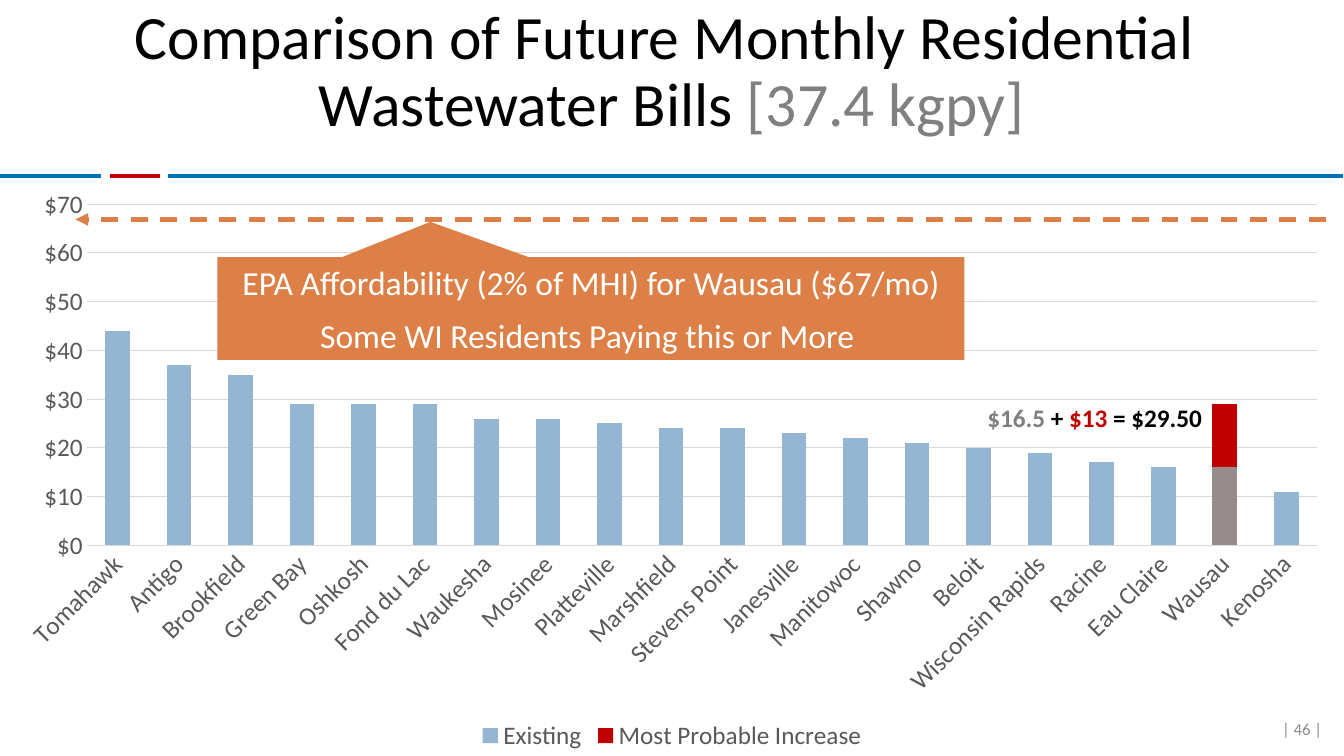
"""Build a slide comparing future monthly residential wastewater bills."""
from lxml import etree
from pptx import Presentation
from pptx.chart.data import CategoryChartData
from pptx.dml.color import RGBColor
from pptx.enum.chart import XL_CHART_TYPE, XL_LEGEND_POSITION, XL_TICK_MARK
from pptx.enum.dml import MSO_LINE
from pptx.enum.shapes import MSO_CONNECTOR, MSO_SHAPE
from pptx.enum.text import MSO_ANCHOR, PP_ALIGN
from pptx.oxml.ns import qn
from pptx.util import Cm, Pt

STACK = XL_CHART_TYPE.COLUMN_STACKED
BOTTOM = XL_LEGEND_POSITION.BOTTOM
NO_TICK = XL_TICK_MARK.NONE
DASH = MSO_LINE.DASH
LINE = MSO_CONNECTOR.STRAIGHT
CALLOUT = MSO_SHAPE.RECTANGULAR_CALLOUT
TOP, MIDDLE = MSO_ANCHOR.TOP, MSO_ANCHOR.MIDDLE
CENTER, RIGHT = PP_ALIGN.CENTER, PP_ALIGN.RIGHT

THEME = {
    "font": "Calibri",
    "color": {
        "black": "000000", "white": "FFFFFF", "gray": "808080",
        "page": "8C8C8C", "axis": "595959", "grid": "D9D9D9",
        "blue": "0070C0", "red": "C00000", "orange": "DD8047",
        "bar": "94B6D2", "focus": "968C8C",
    },
    "size": {"title": 44, "note": 24, "label": 18, "page": 12},
}

BILLS = {
    "Tomahawk": 44, "Antigo": 37, "Brookfield": 35, "Green Bay": 29,
    "Oshkosh": 29, "Fond du Lac": 29, "Waukesha": 26, "Mosinee": 26,
    "Platteville": 25, "Marshfield": 24, "Stevens Point": 24,
    "Janesville": 23, "Manitowoc": 22, "Shawno": 21, "Beloit": 20,
    "Wisconsin Rapids": 19, "Racine": 17, "Eau Claire": 16,
    "Wausau": 16, "Kenosha": 11,
}
FOCUS, RISE = "Wausau", 13
SERIES = [("Existing", "bar"), ("Most Probable Increase", "red")]

BREAK = "\n"
TITLE = [[("Comparison of Future Monthly Residential ", "black"),
          (BREAK, "black"), ("Wastewater Bills ", "black"),
          ("[37.4 kgpy]", "gray")]]
NOTE = [
    [("EPA Affordability (2% of MHI) for Wausau ($67/mo)", "white")],
    [("Some WI Residents Paying this or More ", "white")],
]
SUM = [[("$16.5 ", "gray"), ("+ ", "black"), ("$13 ", "red"),
        ("= $29.50", "black")]]
PAGE = [[("| 46 |", "page")]]

WIDTH, HEIGHT = 33.86, 19.05
RULE_Y, LIMIT_Y = 4.43, 5.53
RULES = [(4.24, 33.83, "blue"), (0, 2.54, "blue"), (2.77, 4.04, "red")]
LIMIT = (33.4, 1.9)
TEXTS = [
    ((2.32, 0, 29.21, 3.68), TITLE, "title",
     {"alignment": CENTER, "line_spacing": 0.9}, MIDDLE, False),
    ((31.53, 17.86, 2.03, 1.02), PAGE, "page",
     {"alignment": RIGHT}, MIDDLE, False),
    ((23.62, 10.01, 7.92, 1.02), SUM, "label",
     {"alignment": CENTER}, TOP, True),
]
CHART = (0, 4.47, WIDTH, HEIGHT - 4.47)
BOX = (5.48, 6.48, 18.82, 2.59)
POINTER = (-0.215, -0.843)


def apply(target, **values):
    for name, value in values.items():
        setattr(target, name, value)


def place(box):
    return [Cm(part) for part in box]


def tint(name):
    return RGBColor.from_string(THEME["color"][name])


def paint(fill, name):
    fill.solid()
    fill.fore_color.rgb = tint(name)


def style(font, size, color, bold=False):
    apply(font, name=THEME["font"], size=Pt(THEME["size"][size]), bold=bold)
    font.color.rgb = tint(color)


def stroke(line, color, width):
    paint(line.fill, color)
    line.width = Pt(width)


def write(frame, lines, size, form, anchor=MIDDLE, bold=False, gap=0):
    apply(frame, word_wrap=True, vertical_anchor=anchor)
    for row, runs in enumerate(lines):
        para = frame.add_paragraph() if row else frame.paragraphs[0]
        apply(para, **form)
        if row and gap:
            para.space_before = Pt(gap)
        for text, color in runs:
            if text == BREAK:
                para.add_line_break()
                continue
            run = para.add_run()
            run.text = text
            style(run.font, size, color, bold)


def rule(shapes, start, end, y, color):
    line = shapes.add_connector(LINE, Cm(start), Cm(y), Cm(end), Cm(y))
    stroke(line.line, color, 3)
    etree.SubElement(line._element.spPr, qn("a:effectLst"))
    return line


def draw_chart(shapes):
    towns = list(BILLS)
    data = CategoryChartData()
    data.categories = towns
    rows = (BILLS.values(), [RISE * (town == FOCUS) for town in towns])
    for (name, color), row in zip(SERIES, rows):
        data.add_series(name, row)
    chart = shapes.add_chart(STACK, *place(CHART), data).chart
    style(chart.font, "label", "black")
    apply(chart, has_title=False, has_legend=True)
    apply(chart.legend, position=BOTTOM, include_in_layout=False)
    style(chart.legend.font, "label", "axis")

    plot = chart.plots[0]
    apply(plot, gap_width=150, overlap=100, vary_by_categories=False)
    for bars, (name, color) in zip(plot.series, SERIES):
        paint(bars.format.fill, color)
        bars.invert_if_negative = False
    focus = plot.series[0].points[towns.index(FOCUS)]
    paint(focus.format.fill, "focus")

    names, costs = chart.category_axis, chart.value_axis
    for axis in (names, costs):
        apply(axis, major_tick_mark=NO_TICK, minor_tick_mark=NO_TICK)
        style(axis.tick_labels.font, "label", "axis")
    stroke(names.format.line, "grid", 0.75)
    names._element.txPr.bodyPr.set("rot", "-2700000")
    apply(costs, minimum_scale=0, maximum_scale=70, major_unit=10,
          has_major_gridlines=True)
    apply(costs.tick_labels, number_format='"$"#,##0',
          number_format_is_linked=False)
    costs.format.line.fill.background()
    stroke(costs.major_gridlines.format.line, "grid", 0.75)


def draw_limit(shapes):
    limit = rule(shapes, *LIMIT, LIMIT_Y, "orange")
    limit.line.dash_style = DASH
    tip = etree.SubElement(limit.line._get_or_add_ln(), qn("a:tailEnd"))
    tip.set("type", "triangle")
    note = shapes.add_shape(CALLOUT, *place(BOX))
    note.shadow.inherit = False
    paint(note.fill, "orange")
    note.line.fill.background()
    for spot, value in enumerate(POINTER):
        note.adjustments[spot] = value
    write(note.text_frame, NOTE, "note", {"alignment": CENTER}, gap=9)


def main():
    deck = Presentation()
    apply(deck, slide_width=Cm(WIDTH), slide_height=Cm(HEIGHT))
    shapes = deck.slides.add_slide(deck.slide_layouts[6]).shapes
    for start, end, color in RULES:
        rule(shapes, start, end, RULE_Y, color)
    draw_chart(shapes)
    draw_limit(shapes)
    for box, lines, size, form, anchor, bold in TEXTS:
        frame = shapes.add_textbox(*place(box)).text_frame
        write(frame, lines, size, form, anchor, bold)
    deck.save("out.pptx")


if __name__ == "__main__":
    main()
